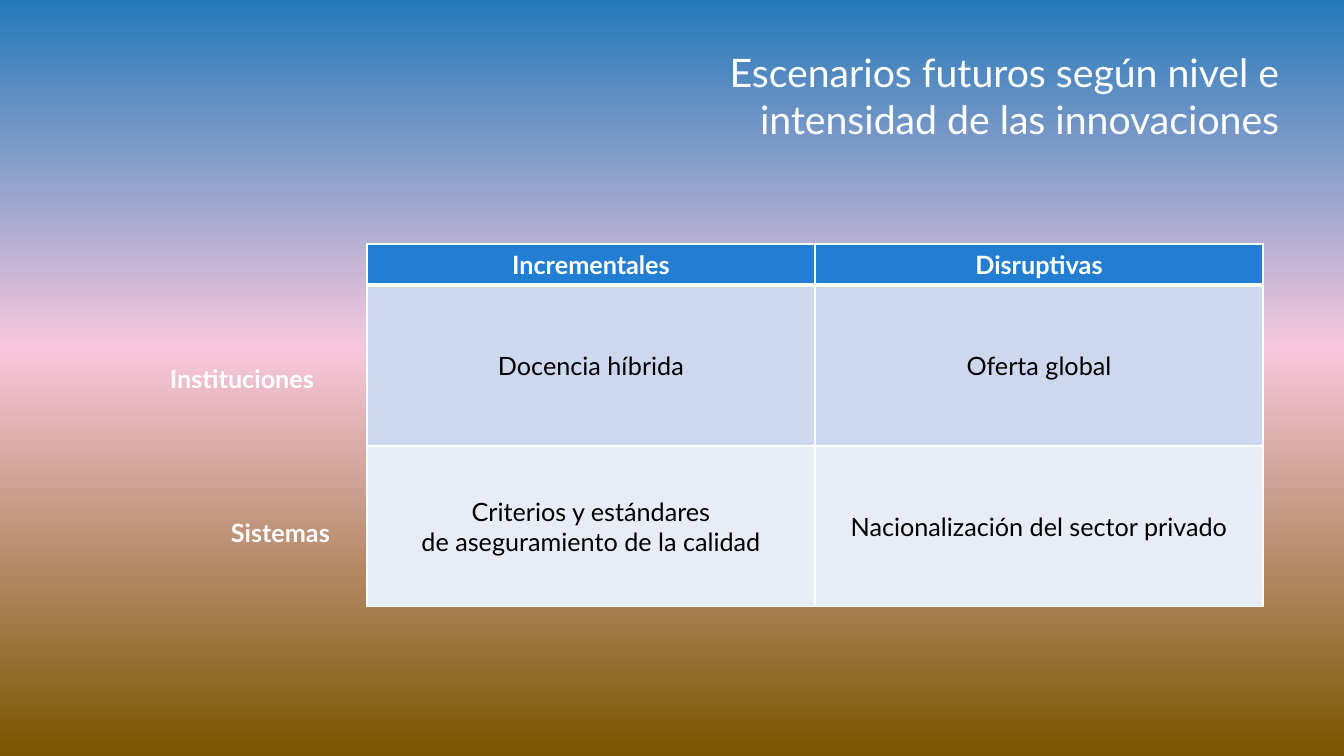
from copy import deepcopy

from lxml import etree
from pptx import Presentation
from pptx import util as u
from pptx.dml.color import RGBColor
from pptx.enum import text
from pptx.oxml import ns

PX = 914400 / 100.8
FONT = "Lato"
WHITE = RGBColor(0xFF, 0xFF, 0xFF)
BLACK = RGBColor(0x00, 0x00, 0x00)
HEADER = RGBColor(0x21, 0x7E, 0xD3)
BAND_DARK = RGBColor(0xCD, 0xD8, 0xEF)
BAND_LIGHT = RGBColor(0xE8, 0xEC, 0xF7)
SKY = RGBColor(0x25, 0x79, 0xB9)
PINK = RGBColor(0xF7, 0xC8, 0xDD)
EARTH = RGBColor(0x7A, 0x54, 0x00)


def px(n):
    """Turn pixels into EMU."""
    return u.Emu(round(n * PX))


def write(tf, lines, size, color, align, bold=False):
    """Fill a text frame with one paragraph per line."""
    for i, line in enumerate(lines):
        p = tf.paragraphs[0] if i == 0 else tf.add_paragraph()
        p.text = line
        p.alignment = align
        p.font.name = FONT
        p.font.size = u.Pt(size)
        p.font.bold = bold
        p.font.color.rgb = color


def add_background(s):
    """Paint the vertical three-colour gradient."""
    fill = s.background.fill
    fill.gradient()
    fill.gradient_angle = 270
    stops = s.element.xpath(".//a:gsLst")[0]
    stops.append(deepcopy(stops[0]))
    for stop, (pos, color) in zip(fill.gradient_stops, [(0, SKY), (0.46, PINK), (1, EARTH)]):
        stop.position = pos
        stop.color.rgb = color


def add_text(s, box, lines, size, align=text.PP_ALIGN.LEFT, bold=False):
    """Place a white text box."""
    tf = s.shapes.add_textbox(*map(px, box)).text_frame
    tf.word_wrap = True
    write(tf, lines, size, WHITE, align, bold)


def set_borders(cell, top, bottom):
    """Draw white cell borders, with top and bottom widths in points."""
    tc_pr = cell._tc.get_or_add_tcPr()
    for side, width in [("L", 1), ("R", 1), ("T", top), ("B", bottom)]:
        ln = etree.SubElement(tc_pr, ns.qn(f"a:ln{side}"), w=str(u.Pt(width)))
        fill = etree.SubElement(ln, ns.qn("a:solidFill"))
        etree.SubElement(fill, ns.qn("a:srgbClr"), val=str(WHITE))


def add_scenarios(s, box):
    """Place the scenario table, its body rows sharing the height below the header."""
    rows = [
        (HEADER, WHITE, [["Incrementales"], ["Disruptivas"]]),
        (BAND_DARK, BLACK, [["Docencia híbrida"], ["Oferta global"]]),
        (BAND_LIGHT, BLACK, [["Criterios y estándares", "de aseguramiento de la calidad"],
                             ["Nacionalización del sector privado"]]),
    ]
    header_height = 41
    body_height = (box[3] - header_height) // 2
    table = s.shapes.add_table(3, 2, *map(px, box)).table
    for r, (fill, color, cells) in enumerate(rows):
        table.rows[r].height = px(body_height if r else header_height)
        for c, lines in enumerate(cells):
            cell = table.cell(r, c)
            set_borders(cell, 3 if r == 1 else 1, 1 if r else 3)
            cell.fill.solid()
            cell.fill.fore_color.rgb = fill
            cell.vertical_anchor = text.MSO_ANCHOR.MIDDLE
            write(cell.text_frame, lines, 18, color, text.PP_ALIGN.CENTER, bold=r == 0)


def main():
    """Build and save the slide."""
    prs = Presentation()
    prs.slide_width, prs.slide_height = px(1344), px(756)
    s = prs.slides.add_slide(prs.slide_layouts[6])
    add_background(s)
    add_scenarios(s, (367, 244, 896, 363))
    add_text(s, (160, 358, 207, 40), ["Instituciones"], 18, bold=True)
    add_text(s, (221, 512, 146, 40), ["Sistemas"], 18, bold=True)
    add_text(s, (711, 43, 578, 105),
             ["Escenarios futuros según nivel e", "intensidad de las innovaciones"],
             28, text.PP_ALIGN.RIGHT)
    prs.save("out.pptx")


if __name__ == "__main__":
    main()
